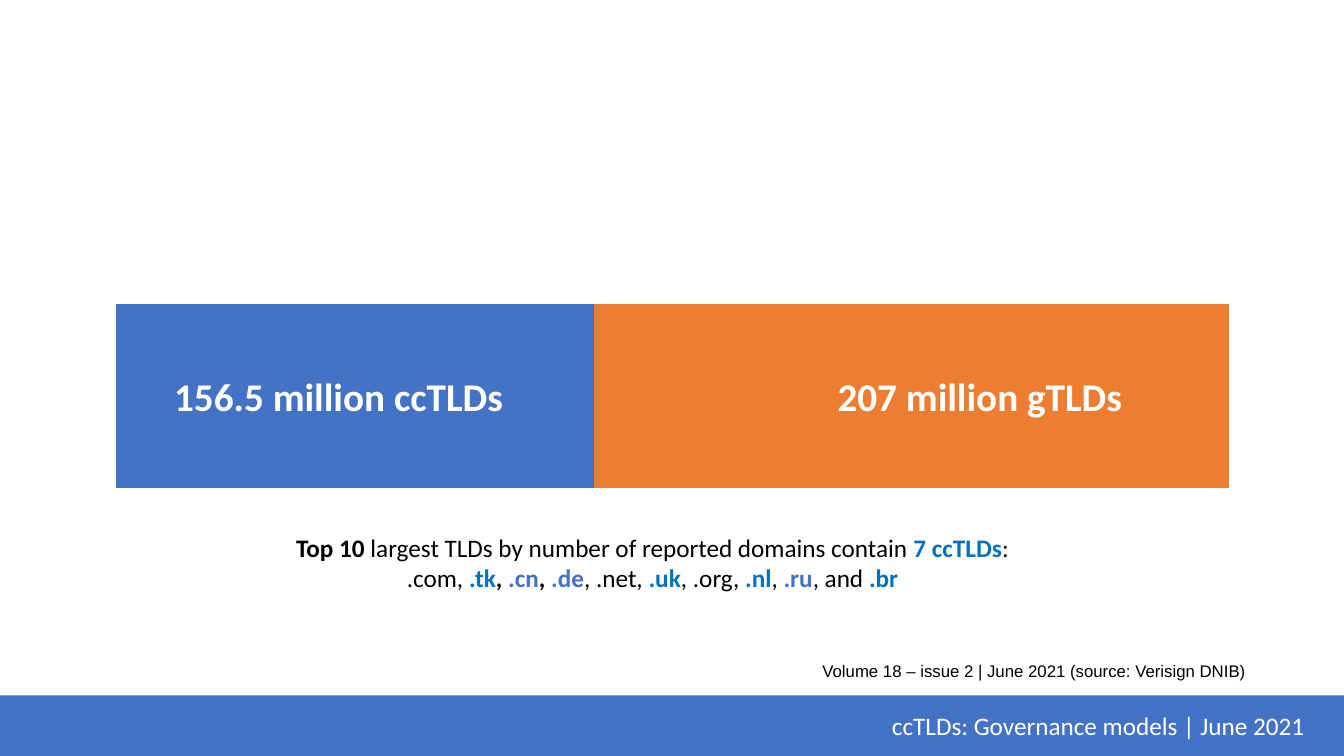
"""Build the slide comparing ccTLD and gTLD domain counts."""
from pptx import Presentation
from pptx.chart.data import CategoryChartData
from pptx.dml.color import RGBColor
from pptx.enum.chart import XL_CHART_TYPE
from pptx.enum.shapes import MSO_SHAPE
from pptx.enum.text import MSO_ANCHOR, MSO_AUTO_SIZE, PP_ALIGN
from pptx.util import Inches, Pt

STACKED = XL_CHART_TYPE.BAR_STACKED_100
RECTANGLE = MSO_SHAPE.RECTANGLE
MIDDLE = MSO_ANCHOR.MIDDLE
GROW = MSO_AUTO_SIZE.SHAPE_TO_FIT_TEXT
LEFT, CENTER, RIGHT = PP_ALIGN.LEFT, PP_ALIGN.CENTER, PP_ALIGN.RIGHT

COLORS = {
    "ink": "000000",
    "white": "FFFFFF",
    "blue": "4472C4",
    "orange": "ED7D31",
    "bright": "0070C0",
}


def color(name):
    return RGBColor.from_string(COLORS[name])


def add_span(para, text, size=18, font="Calibri", ink="ink", bold=False):
    span = para.add_run()
    span.text = text
    span.font.size = Pt(size)
    span.font.name = font
    span.font.bold = bold
    span.font.color.rgb = color(ink)


class SlideBuilder:
    """Place elements on one slide by percentages of its size."""

    def __init__(self, deck):
        self.deck = deck
        self.page = deck.slides.add_slide(deck.slide_layouts[6])

    def area(self, left, top, width, height):
        across, down = self.deck.slide_width / 100, self.deck.slide_height / 100
        return (round(left * across), round(top * down),
                round(width * across), round(height * down))

    def band(self, place, text, fill, **style):
        box = self.page.shapes.add_shape(RECTANGLE, *self.area(*place))
        box.shadow.inherit = False
        box.fill.solid()
        box.fill.fore_color.rgb = color(fill)
        box.line.fill.background()
        frame = box.text_frame
        frame.vertical_anchor = MIDDLE
        frame.margin_right = Inches(0.39)
        para = frame.paragraphs[0]
        para.alignment = RIGHT
        add_span(para, text, **style)

    def text(self, place, lines, wrap=False, **style):
        box = self.page.shapes.add_textbox(*self.area(*place))
        frame = box.text_frame
        frame.word_wrap = wrap
        frame.auto_size = GROW
        for index, (alignment, spans) in enumerate(lines):
            para = frame.add_paragraph() if index else frame.paragraphs[0]
            para.alignment = alignment
            for text, changes in spans:
                add_span(para, text, **{**style, **changes})

    def label(self, place, text, **style):
        self.text(place, [(LEFT, [(text, {})])], **style)

    def share_bar(self, place, shares):
        data = CategoryChartData()
        data.categories = ["1"]
        for name, value, _ in shares:
            data.add_series(name, [value])
        chart = self.page.shapes.add_chart(STACKED, *self.area(*place), data).chart
        chart.has_legend = False
        chart.has_title = False
        chart.font.size = Pt(10)
        chart.font.name = "Calibri"
        chart.font.color.rgb = color("ink")
        for axis in (chart.category_axis, chart.value_axis):
            axis.has_major_gridlines = False
            axis.visible = False
        plot = chart.plots[0]
        plot.vary_by_categories = False
        plot.gap_width = 150
        plot.overlap = 100
        for series, (_, _, fill) in zip(plot.series, shares):
            series.format.fill.solid()
            series.format.fill.fore_color.rgb = color(fill)


def main():
    deck = Presentation()
    deck.slide_width, deck.slide_height = Inches(13.33), Inches(7.5)
    slide = SlideBuilder(deck)

    plain, bold = {}, {"bold": True}
    bright, blue = {"ink": "bright", "bold": True}, {"ink": "blue", "bold": True}

    slide.band((0, 92, 100, 8), "ccTLDs: Governance models | June 2021",
               "blue", ink="white")
    slide.label((60.45, 86.8, 37.5, 4),
                "Volume 18 – issue 2 | June 2021 (source: Verisign DNIB)",
                wrap=True, size=12, font="Arial")
    slide.share_bar((6.9, 20.67, 86.25, 63.47),
                    [("Series 1", 43, "blue"), ("Series 2", 57, "orange")])
    for left, width, text in ((12.22, 26.25, "156.5 million ccTLDs"),
                              (61.58, 22.95, "207 million gTLDs")):
        slide.label((left, 48.53, width, 7.6), text,
                    size=28, ink="white", bold=True)
    slide.text((21.3, 69.73, 55.13, 13.47), [
        (LEFT, [("Top 10 ", bold),
                ("largest TLDs by number of reported domains contain ", plain),
                ("7 ccTLDs", bright), (":", plain)]),
        (CENTER, [(".com, ", plain), (".tk", bright), (", ", bold),
                  (".cn", blue), (", ", bold), (".de", blue),
                  (", .net, ", plain), (".uk", bright), (", .org, ", plain),
                  (".nl", bright), (", ", plain), (".ru", blue),
                  (", and ", plain), (".br", bright)]),
    ])
    deck.save("out.pptx")


if __name__ == "__main__":
    main()
